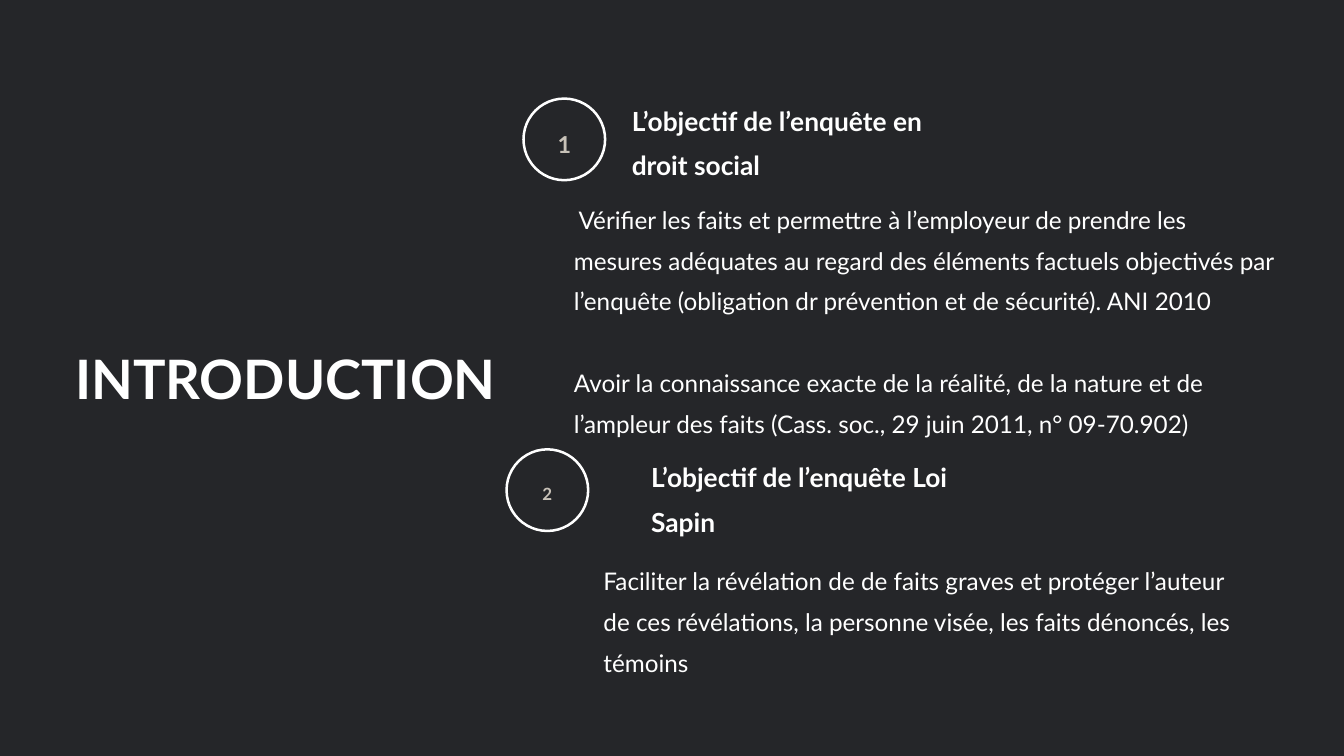
from dataclasses import dataclass

from pptx import Presentation
from pptx.dml.color import RGBColor
from pptx.enum.shapes import MSO_SHAPE as Shape
from pptx.enum.text import MSO_ANCHOR as Anchor, PP_ALIGN as Align
from pptx.slide import Slide
from pptx.util import Cm, Pt

FONT = "Lato"
BACKGROUND, WHITE, SAND = "252629", "FFFFFF", "C8C2B8"
RING_SIZE = 3.18
PARAGRAPH_GAP = 43.7  # points


@dataclass
class TextBlock:
    left: float
    top: float
    width: float
    height: float
    paragraphs: list[str]
    size: float
    bold: bool = False
    color: str = WHITE
    line_spacing: float = 1.4
    align: Align = Align.LEFT
    first_indent: float = 0


@dataclass
class NumberRing:
    left: float
    top: float
    number: str
    number_top: float
    number_height: float
    size: float


def rgb(color: str) -> RGBColor:
    return RGBColor.from_string(color)


def draw_text(slide: Slide, block: TextBlock) -> None:
    box = slide.shapes.add_textbox(
        Cm(block.left), Cm(block.top), Cm(block.width), Cm(block.height))
    frame = box.text_frame
    frame.word_wrap = True
    frame.vertical_anchor = Anchor.TOP
    frame.margin_left = frame.margin_right = 0
    frame.margin_top = frame.margin_bottom = 0
    for index, text in enumerate(block.paragraphs):
        paragraph = frame.paragraphs[0] if index == 0 else frame.add_paragraph()
        paragraph.alignment = block.align
        paragraph.line_spacing = block.line_spacing
        if index > 0:
            paragraph.space_before = Pt(PARAGRAPH_GAP)
        elif block.first_indent:
            properties = paragraph._p.get_or_add_pPr()
            properties.set("indent", str(int(Cm(block.first_indent))))
        run = paragraph.add_run()
        run.text = text
        run.font.name = FONT
        run.font.size = Pt(block.size)
        run.font.bold = block.bold
        run.font.color.rgb = rgb(block.color)


def draw_ring(slide: Slide, ring: NumberRing) -> None:
    shape = slide.shapes.add_shape(
        Shape.DONUT, Cm(ring.left), Cm(ring.top), Cm(RING_SIZE), Cm(RING_SIZE))
    shape.adjustments[0] = 0.03
    shape.shadow.inherit = False
    shape.fill.solid()
    shape.fill.fore_color.rgb = rgb(WHITE)
    shape.line.fill.background()
    draw_text(slide, TextBlock(
        ring.left, ring.number_top, RING_SIZE, ring.number_height, [ring.number],
        ring.size, bold=True, color=SAND, line_spacing=1.2, align=Align.CENTER))


TITLE = TextBlock(2.84, 12.55, 17.7, 2.46, ["INTRODUCTION"], 58.2,
                  bold=True, line_spacing=1.2)

HEADINGS = [
    TextBlock(23.88, 3.51, 12.19, 2.74,
              ["L’objectif de l’enquête en droit social"], 28.2, bold=True),
    TextBlock(24.61, 16.97, 12.19, 2.74,
              ["L’objectif de l’enquête Loi Sapin"], 28.2, bold=True),
]

BODIES = [
    TextBlock(21.69, 7.32, 26.64, 8.89, [
        "Vérifier les faits et permettre à l’employeur de prendre les mesures "
        "adéquates au regard des éléments factuels objectivés par l’enquête "
        "(obligation dr prévention et de sécurité). ANI 2010",
        "Avoir la connaissance exacte de la réalité, de la nature et de "
        "l’ampleur des faits (Cass. soc., 29 juin 2011, n° 09-70.902)",
    ], 26, first_indent=0.18),
    TextBlock(22.81, 20.98, 24.26, 4.22, [
        "Faciliter la révélation de de faits graves et protéger l’auteur de ces "
        "révélations, la personne visée, les faits dénoncés, les témoins",
    ], 26),
]

RINGS = [
    NumberRing(19.74, 3.68, "1", 4.7, 1.09, 25),
    NumberRing(19.1, 16.94, "2", 18.14, 0.79, 18.1),
]


def main() -> None:
    presentation = Presentation()
    presentation.slide_width, presentation.slide_height = Cm(50.8), Cm(28.58)
    slide = presentation.slides.add_slide(presentation.slide_layouts[6])
    slide.background.fill.solid()
    slide.background.fill.fore_color.rgb = rgb(BACKGROUND)

    # Title, headings and body text
    for block in [TITLE, *HEADINGS, *BODIES]:
        draw_text(slide, block)

    # Numbered rings
    for ring in RINGS:
        draw_ring(slide, ring)

    presentation.save("out.pptx")


if __name__ == "__main__":
    main()
